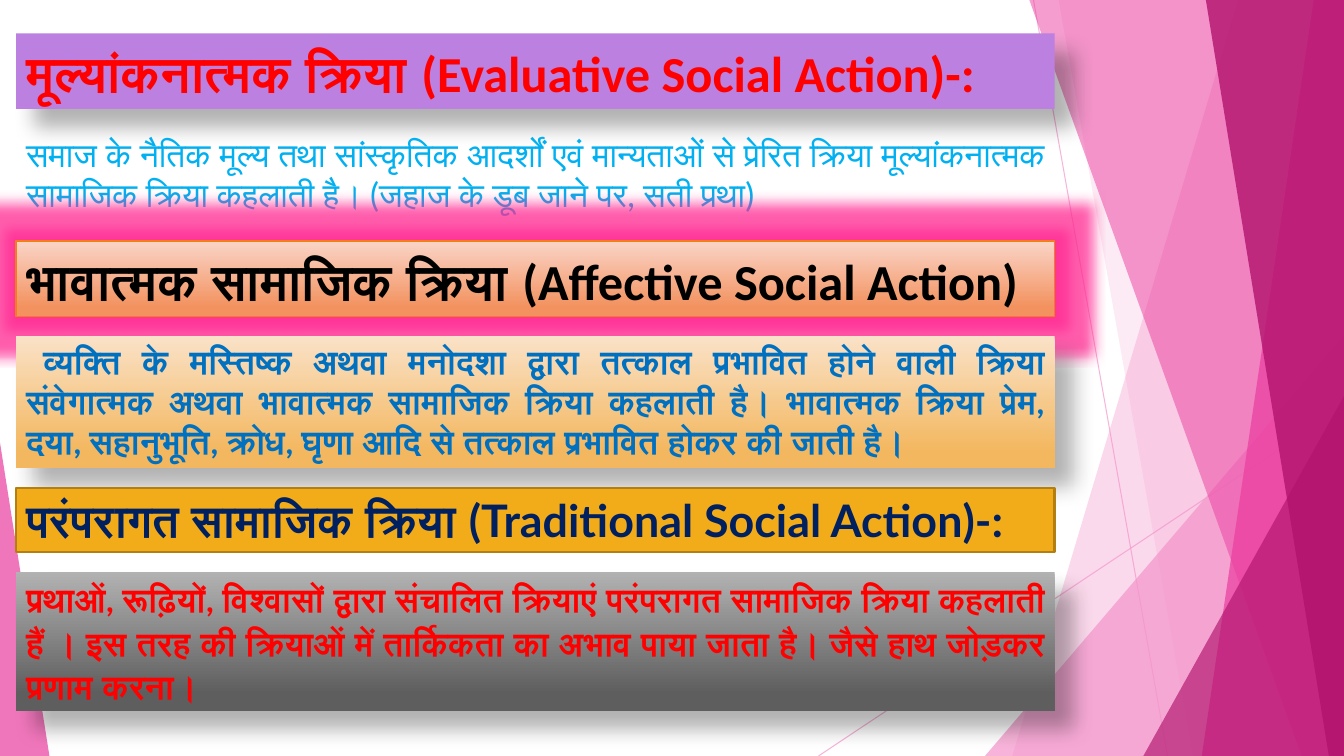
import pptx
import pptx.util
import pptx.dml.color
import pptx.enum.shapes
import pptx.enum.text
import pptx.oxml.ns
import lxml.etree

RGBColor = pptx.dml.color.RGBColor
Pt = pptx.util.Pt
SHAPE = pptx.enum.shapes.MSO_SHAPE
ALIGN = pptx.enum.text.PP_ALIGN
qn = pptx.oxml.ns.qn

ROSE = RGBColor(0xF4, 0x96, 0xCB)
PINK = RGBColor(0xEB, 0x3D, 0x9F)
WINE = RGBColor(0xB2, 0x13, 0x6D)
GLOW = RGBColor(0xFF, 0x29, 0x92)
LILAC = RGBColor(0xBC, 0x80, 0xE0)
AMBER = RGBColor(0xF2, 0xAC, 0x19)
BROWN = RGBColor(0xB3, 0x7F, 0x12)
RUST = RGBColor(0xF2, 0x7E, 0x19)
PEACH = (RGBColor(0xFA, 0xD5, 0xC8), RGBColor(0xF3, 0x92, 0x5F))
CREAM = (RGBColor(0xFA, 0xE2, 0xC8), RGBColor(0xF3, 0xB7, 0x5F))
GREY = (RGBColor(0xB2, 0xB2, 0xB2), RGBColor(0x5E, 0x5E, 0x5E))
RED = RGBColor(0xFF, 0x00, 0x00)
SKY = RGBColor(0x00, 0xB0, 0xF0)
BLUE = RGBColor(0x00, 0x70, 0xC0)
NAVY = RGBColor(0x00, 0x20, 0x60)
BLACK = RGBColor(0x00, 0x00, 0x00)


class Board:
    """Draws on one slide; places are percent of its width and height."""

    LEFT, WIDTH = 1.2, 77.27

    def __init__(self, deck):
        self.deck = deck
        self.slide = deck.slides.add_slide(deck.slide_layouts[6])
        self.shapes = self.slide.shapes

    def across(self, share):
        return round(self.deck.slide_width * share / 100)

    def down(self, share):
        return round(self.deck.slide_height * share / 100)

    def place(self, left, top, width, height):
        return (self.across(left), self.down(top),
                self.across(width), self.down(height))

    def fade(self, node, alpha):
        """Set the opacity, in percent, of the colour in node."""
        tint = next(node.iter(qn("a:srgbClr")))
        lxml.etree.SubElement(tint, qn("a:alpha"), val=str(alpha * 1000))

    def effect(self, shape, kind, color, alpha, **sizes):
        shape.shadow.inherit = False
        group = shape._element.spPr.find(qn("a:effectLst"))
        node = lxml.etree.SubElement(group, qn(kind))
        for name, value in sizes.items():
            node.set(name, str(value))
        lxml.etree.SubElement(node, qn("a:srgbClr"), val=str(color))
        self.fade(node, alpha)

    def shade(self, shape):
        self.effect(shape, "a:outerShdw", BLACK, 30, blurRad=Pt(15),
                    dist=Pt(18), dir=45 * 60000, algn="tl", rotWithShape=0)

    def shine(self, shape):
        self.effect(shape, "a:glow", GLOW, 75, rad=Pt(18))

    def tint(self, shape, color, alpha):
        shape.shadow.inherit = False
        shape.fill.solid()
        shape.fill.fore_color.rgb = color
        self.fade(shape._element.spPr, alpha)
        shape.line.fill.background()

    def ray(self, start, end):
        line = self.shapes.add_connector(
            pptx.enum.shapes.MSO_CONNECTOR.STRAIGHT,
            self.across(start[0]), self.down(start[1]),
            self.across(end[0]), self.down(end[1]))
        line.line.color.rgb = ROSE
        line.line.width = Pt(0.75)
        props = line._element.spPr
        self.fade(props, 70)
        lxml.etree.SubElement(props, qn("a:effectLst"))

    def shard(self, top, base, color, alpha):
        """Fill from a slanted edge to the right side of the slide."""
        pen = self.shapes.build_freeform(self.across(top), 0)
        pen.add_line_segments([
            (self.across(100), 0), (self.across(100), self.down(100)),
            (self.across(base), self.down(100))], close=True)
        self.tint(pen.convert_to_shape(), color, alpha)

    def wedge(self, left, top, width, peak, color, alpha):
        """Stand a triangle on the bottom edge; peak is its apex, 0 to 1."""
        shape = self.shapes.add_shape(
            SHAPE.ISOSCELES_TRIANGLE,
            *self.place(left, top, width, 100 - top))
        shape.adjustments[0] = peak
        self.tint(shape, color, alpha)

    def panel(self, top, height, fill, edge=None, weight=1):
        """Add a bar; a pair of colours as fill makes a gradient."""
        shape = self.shapes.add_shape(
            SHAPE.RECTANGLE, *self.place(self.LEFT, top, self.WIDTH, height))
        shape.shadow.inherit = False
        if isinstance(fill, RGBColor):
            shape.fill.solid()
            shape.fill.fore_color.rgb = fill
        else:
            shape.fill.gradient()
            shape.fill.gradient_angle = 270
            stops = shape.fill.gradient_stops
            for stop, color, spot in zip(stops, fill, (0, 0.88)):
                stop.color.rgb = color
                stop.position = spot
        if edge is None:
            shape.line.fill.background()
        else:
            shape.line.color.rgb = edge
            shape.line.width = Pt(weight)
        return shape

    def blank(self, top, height):
        return self.shapes.add_textbox(
            *self.place(self.LEFT, top, self.WIDTH, height))

    def label(self, shape, text, size, color, font="Calibri", bold=True,
              align=ALIGN.JUSTIFY, loose=False, indent=0):
        frame = shape.text_frame
        frame.word_wrap = True
        frame.auto_size = pptx.enum.text.MSO_AUTO_SIZE.SHAPE_TO_FIT_TEXT
        frame.vertical_anchor = pptx.enum.text.MSO_ANCHOR.TOP
        para = frame.paragraphs[0]
        para.alignment = align
        if loose:
            para.line_spacing = 1.07
            para.space_after = Pt(8)
        if indent:
            para._p.get_or_add_pPr().set("indent", str(self.across(indent)))
        run = para.add_run()
        run.text = text
        run.font.size = Pt(size)
        run.font.name = font
        run.font.bold = bold
        run.font.color.rgb = color


def scene(board):
    board.ray((76.9, 0), (86.87, 100))
    board.ray((100, 53.73), (60.9, 100))
    board.shard(92.12, 75.32, ROSE, 36)
    board.shard(78.77, 88.75, ROSE, 20)
    board.wedge(73.29, 44.4, 26.71, 1, ROSE, 72)
    board.shard(76.59, 96.85, PINK, 50)
    board.shard(97.75, 89.42, PINK, 70)
    board.shard(89.72, 98.87, WINE, 80)
    board.wedge(85.07, 52.4, 14.93, 1, WINE, 66)
    board.wedge(0, 58.53, 3.68, 0, PINK, 70)


def story(board):
    bar = board.panel(4.4, 10, LILAC)
    board.shade(bar)
    board.label(bar, "मूल्यांकनात्मक क्रिया (Evaluative Social Action)-:",
                36, RED, loose=True)

    board.label(
        board.blank(17.07, 12.13),
        "समाज के नैतिक मूल्य तथा सांस्कृतिक आदर्शों एवं मान्यताओं से प्रेरित "
        "क्रिया मूल्यांकनात्मक सामाजिक क्रिया कहलाती है। "
        "(जहाज के डूब जाने पर, सती प्रथा)",
        24, SKY, font="Lato", bold=False)

    bar = board.panel(31.87, 10, PEACH, RUST)
    board.shine(bar)
    board.label(bar, "भावात्मक सामाजिक क्रिया (Affective Social Action)",
                36, BLACK, loose=True)

    bar = board.panel(44.4, 17.47, CREAM)
    board.shade(bar)
    board.label(
        bar,
        "व्यक्ति के मस्तिष्क अथवा मनोदशा द्वारा तत्काल प्रभावित होने वाली "
        "क्रिया संवेगात्मक अथवा भावात्मक सामाजिक क्रिया कहलाती है। "
        "भावात्मक क्रिया प्रेम, दया, सहानुभूति, क्रोध, घृणा आदि से "
        "तत्काल प्रभावित होकर की जाती है।",
        24, BLUE, indent=1.28)

    bar = board.panel(64.53, 8.53, AMBER, BROWN, 1.5)
    board.label(bar, "परंपरागत सामाजिक क्रिया (Traditional Social Action)-:",
                32, NAVY, font="Lato", align=ALIGN.LEFT)

    bar = board.panel(75.6, 18.4, GREY)
    board.shade(bar)
    board.label(
        bar,
        "प्रथाओं, रूढ़ियों, विश्वासों द्वारा संचालित क्रियाएं परंपरागत सामाजिक "
        "क्रिया कहलाती हैं । इस तरह की क्रियाओं में तार्किकता का अभाव "
        "पाया जाता है। जैसे हाथ जोड़कर प्रणाम करना।",
        24, RED, loose=True)


def main():
    deck = pptx.Presentation()
    deck.slide_width = pptx.util.Inches(13.33)
    deck.slide_height = pptx.util.Inches(7.5)
    board = Board(deck)
    scene(board)
    story(board)
    deck.save("out.pptx")


if __name__ == "__main__":
    main()
